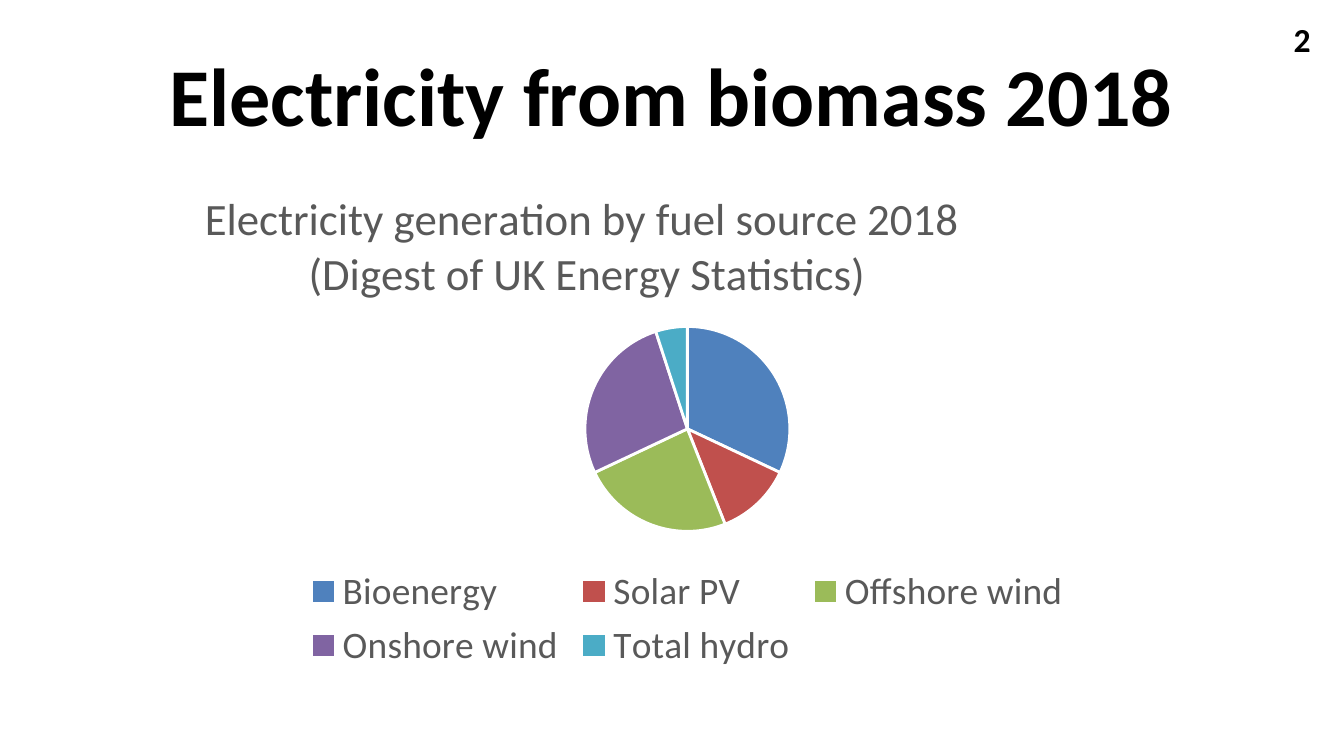
from lxml import etree
from pptx import Presentation
from pptx.chart.data import CategoryChartData
from pptx.dml.color import RGBColor
from pptx.enum.chart import XL_CHART_TYPE, XL_LEGEND_POSITION
from pptx.enum.text import MSO_ANCHOR, PP_ALIGN
from pptx.oxml.ns import qn
from pptx.util import Inches, Pt

PIE = XL_CHART_TYPE.PIE
BOTTOM = XL_LEGEND_POSITION.BOTTOM
MIDDLE = MSO_ANCHOR.MIDDLE
CENTER, RIGHT = PP_ALIGN.CENTER, PP_ALIGN.RIGHT

FONT = "Calibri"
COLORS = {"text": "000000", "grey": "595959", "white": "FFFFFF"}
SOURCES = [
    ("Bioenergy", 32, "4F81BD"),
    ("Solar PV", 12, "C0504D"),
    ("Offshore wind", 24, "9BBB59"),
    ("Onshore wind", 27, "8064A2"),
    ("Total hydro", 5, "4BACC6"),
]


def write(tf, text, size, color="text", bold=False, align=CENTER):
    for i, line in enumerate(text.split("\n")):
        p = tf.paragraphs[0] if i == 0 else tf.add_paragraph()
        p.alignment = align
        r = p.add_run()
        r.text = line
        r.font.name = FONT
        r.font.size = Pt(size)
        r.font.bold = bold
        r.font.color.rgb = RGBColor.from_string(COLORS[color])


def set_layout(parent, index, **values):
    for old in parent.findall(qn("c:layout")):
        parent.remove(old)
    layout = etree.Element(qn("c:layout"))
    parent.insert(index, layout)
    manual = etree.SubElement(layout, qn("c:manualLayout"))
    for tag, value in values.items():
        etree.SubElement(manual, qn(f"c:{tag}")).set("val", str(value))


prs = Presentation()
prs.slide_width = Inches(10)
prs.slide_height = prs.slide_width * 9 // 16
s = prs.slides.add_slide(prs.slide_layouts[6])

for text, box, size, align in [
    ("Electricity from biomass 2018", (0.5, 0.23, 9, 0.94), 44, CENTER),
    ("2", (7.52, 0.14, 2.33, 0.3), 18, RIGHT),
]:
    tf = s.shapes.add_textbox(*map(Inches, box)).text_frame
    tf.word_wrap = True
    tf.vertical_anchor = MIDDLE
    write(tf, text, size, bold=True, align=align)

data = CategoryChartData()
data.categories = [name for name, _, _ in SOURCES]
data.add_series("Series 1", [value for _, value, _ in SOURCES])
box = map(Inches, (0.35, 1.24, 9.53, 3.79))
chart = s.shapes.add_chart(PIE, *box, data).chart
chart.font.name = FONT
chart.font.size = Pt(10)

chart.has_title = True
title = chart.chart_title
write(title.text_frame,
      "Electricity generation by fuel source 2018 \n(Digest of UK Energy Statistics)",
      24, color="grey")
title.include_in_layout = False
set_layout(title._element, 1, xMode="edge", yMode="edge", x=0.12, y=0.04)

chart.has_legend = True
legend = chart.legend
legend.position = BOTTOM
legend.include_in_layout = False
legend.font.name = FONT
legend.font.size = Pt(20)
legend.font.color.rgb = RGBColor.from_string(COLORS["grey"])

plot = chart.plots[0]
plot.vary_by_categories = True
for i, (_, _, color) in enumerate(SOURCES):
    fmt = plot.series[0].points[i].format
    fmt.fill.solid()
    fmt.fill.fore_color.rgb = RGBColor.from_string(color)
    fmt.line.color.rgb = RGBColor.from_string(COLORS["white"])
    fmt.line.width = Pt(1.5)
plot_area = chart._chartSpace.chart.plotArea
set_layout(plot_area, 0, layoutTarget="inner", xMode="edge", yMode="edge",
           x=0.42, y=0.31, w=0.16, h=0.41)

prs.save("out.pptx")
